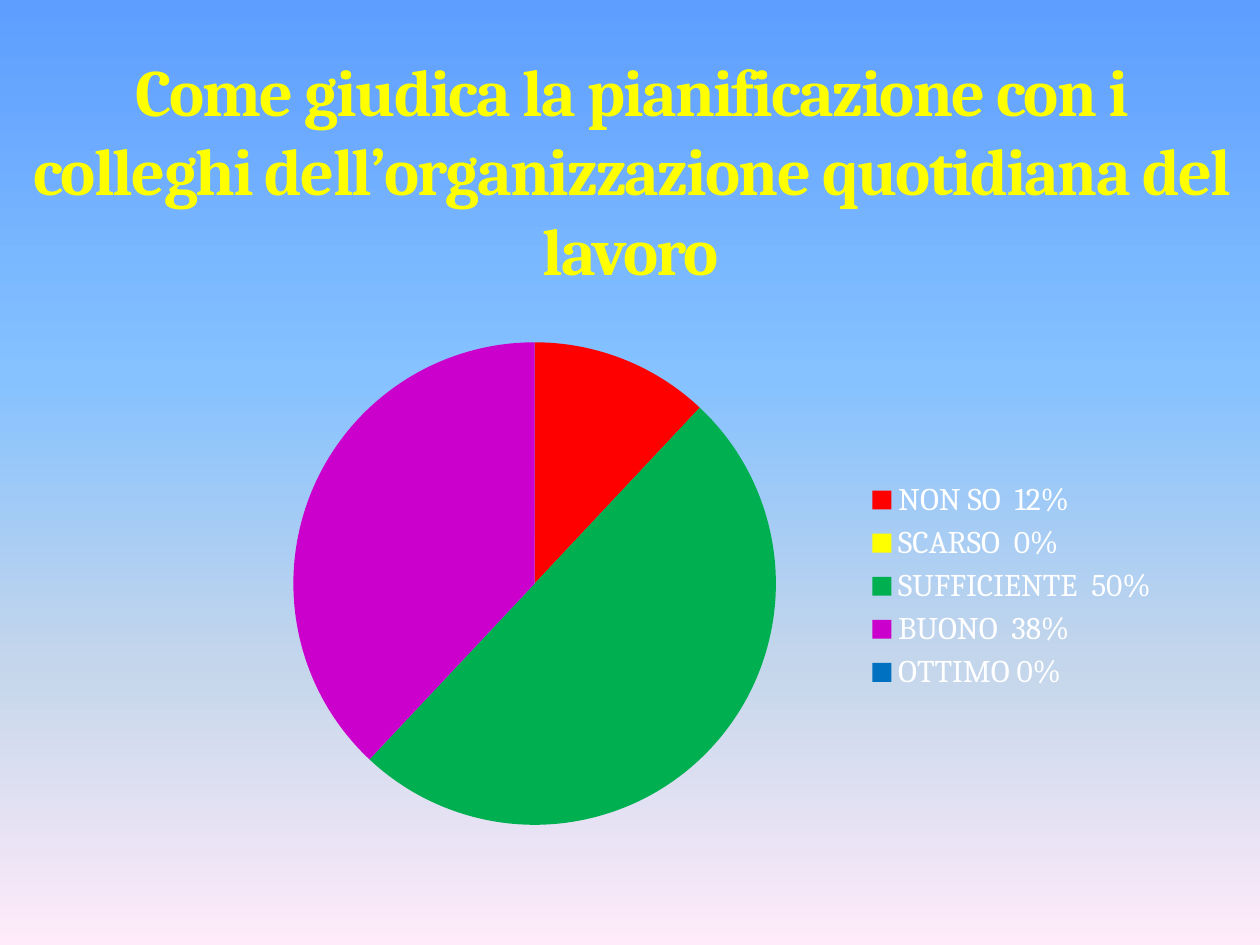
import pptx
import pptx.chart.data
import pptx.dml.color
import pptx.enum.chart
import pptx.enum.text
import pptx.oxml
import pptx.oxml.ns
import pptx.util

Pt = pptx.util.Pt
RGBColor = pptx.dml.color.RGBColor
qn = pptx.oxml.ns.qn
NAMESPACES = pptx.oxml.ns.nsdecls("a", "c")

WHITE = RGBColor(0xFF, 0xFF, 0xFF)
YELLOW = RGBColor(0xFF, 0xFF, 0x00)
PLUM = RGBColor(0x9C, 0x38, 0x88)
SKY = [
    (0, RGBColor(0x5E, 0x9E, 0xFF)),
    (40, RGBColor(0x85, 0xC2, 0xFF)),
    (70, RGBColor(0xC4, 0xD6, 0xEB)),
    (100, RGBColor(0xFF, 0xEB, 0xFA)),
]
ANSWERS = [
    ("NON SO  12%", 12, RGBColor(0xFF, 0x00, 0x00)),
    ("SCARSO  0%", 0, YELLOW),
    ("SUFFICIENTE  50%", 50, RGBColor(0x00, 0xB0, 0x50)),
    ("BUONO  38%", 38, RGBColor(0xCC, 0x00, 0xCC)),
    ("OTTIMO 0%", 0, RGBColor(0x00, 0x70, 0xC0)),
]


def apply(target, values):
    for name, value in values.items():
        setattr(target, name, value)


class SurveySlide:
    title_font = {"name": "Cambria", "size": Pt(37.8), "bold": True}
    chart_font = {"name": "Cambria", "size": Pt(18)}

    def __init__(self, deck):
        self.page = deck.slides.add_slide(deck.slide_layouts[5])

    def background(self, stops):
        """Fill the page from top to bottom with (percent, colour) stops."""
        fill = self.page.background.fill
        fill.gradient()
        fill.gradient_angle = 270
        stop_list = self.page.element.find(".//" + qn("a:gsLst"))
        stop_list.clear()
        for percent, colour in stops:
            stop_list.append(pptx.oxml.parse_xml(
                f'<a:gs {NAMESPACES} pos="{percent * 1000}">'
                f'<a:srgbClr val="{colour}"/></a:gs>'))

    def title(self, text, left, top, width, height):
        box = self.page.shapes.title
        apply(box, {"left": Pt(left), "top": Pt(top),
                    "width": Pt(width), "height": Pt(height)})
        frame = box.text_frame
        apply(frame, {"word_wrap": True,
                      "auto_size": pptx.enum.text.MSO_AUTO_SIZE.NONE,
                      "vertical_anchor": pptx.enum.text.MSO_ANCHOR.BOTTOM,
                      "margin_bottom": Pt(49)})
        para = frame.paragraphs[0]
        para.alignment = pptx.enum.text.PP_ALIGN.CENTER
        span = para.add_run()
        span.text = text
        apply(span.font, self.title_font)
        span.font.color.rgb = YELLOW
        properties = span.font._element
        properties.set("spc", "-100")
        properties.insert(0, pptx.oxml.parse_xml(
            f'<a:ln {NAMESPACES} w="{Pt(0.25)}"><a:solidFill>'
            f'<a:srgbClr val="{PLUM}"><a:alpha val="25000"/></a:srgbClr>'
            '</a:solidFill></a:ln>'))

    def pie(self, answers, left, top, width, height, plot):
        """Draw the answers; plot is the pie's x, y, w, h as chart fractions."""
        data = pptx.chart.data.CategoryChartData()
        data.categories = [label for label, value, colour in answers]
        data.add_series("Series 1", [value for label, value, colour in answers])
        chart = self.page.shapes.add_chart(
            pptx.enum.chart.XL_CHART_TYPE.PIE,
            Pt(left), Pt(top), Pt(width), Pt(height), data).chart
        apply(chart, {"has_title": False, "has_legend": True})
        apply(chart.font, self.chart_font)
        chart.font.color.rgb = WHITE
        apply(chart.legend, {
            "position": pptx.enum.chart.XL_LEGEND_POSITION.RIGHT,
            "include_in_layout": True})
        chart.plots[0].vary_by_categories = True
        points = chart.plots[0].series[0].points
        for index, (label, value, colour) in enumerate(answers):
            fill = points[index].format.fill
            fill.solid()
            fill.fore_color.rgb = colour
        self.place_plot(chart, plot)

    def place_plot(self, chart, plot):
        area = chart.element.find(".//" + qn("c:plotArea"))
        for automatic in area.findall(qn("c:layout")):
            area.remove(automatic)
        sizes = "".join(f'<c:{name} val="{value}"/>'
                        for name, value in zip("xywh", plot))
        area.insert(0, pptx.oxml.parse_xml(
            f'<c:layout {NAMESPACES}><c:manualLayout>'
            '<c:layoutTarget val="inner"/><c:xMode val="edge"/>'
            f'<c:yMode val="edge"/>{sizes}</c:manualLayout></c:layout>'))


def main():
    deck = pptx.Presentation()
    apply(deck, {"slide_width": Pt(720), "slide_height": Pt(540)})
    slide = SurveySlide(deck)
    slide.background(SKY)
    slide.title("Come giudica la pianificazione con i colleghi "
                "dell’organizzazione quotidiana del lavoro",
                11.5, 34, 698, 180)
    slide.pie(ANSWERS, 118, 186, 551.5, 298, plot=(0.09, 0.03, 0.5, 0.93))
    deck.save("out.pptx")


if __name__ == "__main__":
    main()
